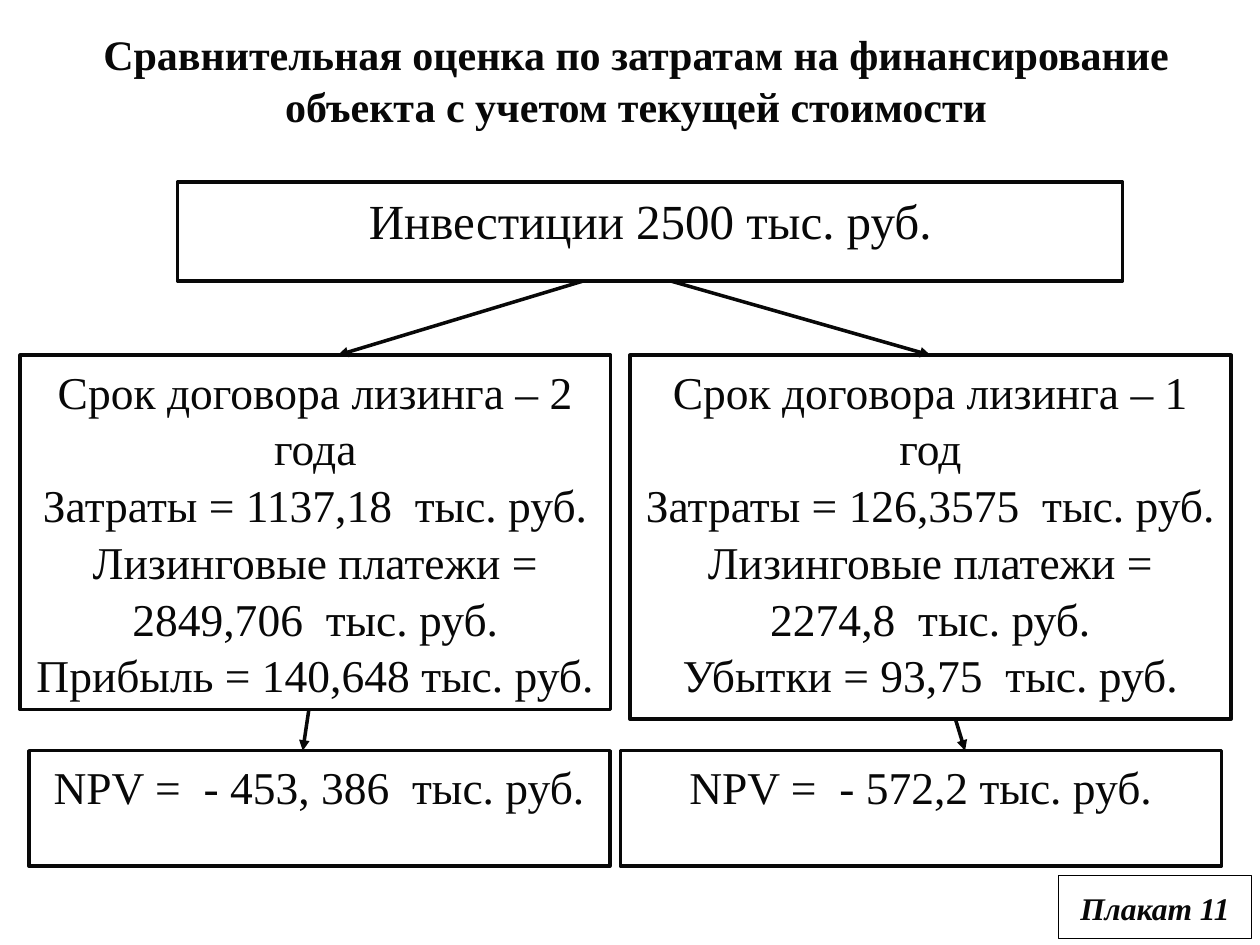
from lxml.etree import SubElement
from pptx import Presentation
from pptx.dml.color import RGBColor
from pptx.enum.shapes import MSO_CONNECTOR, MSO_SHAPE
from pptx.enum.text import MSO_ANCHOR, PP_ALIGN
from pptx.oxml.ns import qn
from pptx.util import Pt

INK = "080808"
WHITE = "FFFFFF"


def color(value):
    return RGBColor.from_string(value)


def write(shape, text, size, bold=False, italic=False, anchor=MSO_ANCHOR.TOP):
    tf = shape.text_frame
    tf.text = text
    tf.word_wrap = True
    tf.vertical_anchor = anchor
    for p in tf.paragraphs:
        p.alignment = PP_ALIGN.CENTER
        p.line_spacing = 1.04
        for r in p.runs:
            r.font.name = "Times New Roman"
            r.font.size = Pt(size)
            r.font.bold = bold
            r.font.italic = italic
            r.font.color.rgb = color(INK)


def add_title(s, x, y, w, h, text):
    box = s.shapes.add_textbox(Pt(x), Pt(y), Pt(w), Pt(h))
    write(box, text, 24, bold=True)


def add_box(s, x, y, w, h, text, size=26, line=INK, width=2, **style):
    sp = s.shapes.add_shape(MSO_SHAPE.RECTANGLE, Pt(x), Pt(y), Pt(w), Pt(h))
    sp.shadow.inherit = False
    sp.fill.solid()
    sp.fill.fore_color.rgb = color(WHITE)
    sp.line.color.rgb = color(line)
    sp.line.width = Pt(width)
    write(sp, text, size, **style)
    return sp


def add_arrow(s, x1, y1, x2, y2):
    c = s.shapes.add_connector(MSO_CONNECTOR.STRAIGHT, Pt(x1), Pt(y1), Pt(x2), Pt(y2))
    c.line.color.rgb = color(INK)
    c.line.width = Pt(2)
    SubElement(c.line._get_or_add_ln(), qn("a:tailEnd"), type="triangle")
    SubElement(c._element.spPr, qn("a:effectLst"))
    return c


def main():
    prs = Presentation()
    prs.slide_width, prs.slide_height = Pt(720), Pt(540)
    s = prs.slides.add_slide(prs.slide_layouts[6])

    # Title
    add_title(s, 25, 11.5, 677, 75.5,
              "Сравнительная оценка по затратам на финансирование "
              "объекта с учетом текущей стоимости")

    # Investment and the two leasing terms
    terms_y, npv_y = 203, 429
    add_box(s, 101.5, 104, 540, 56.5, "Инвестиции 2500 тыс. руб.", size=28)
    add_box(s, 11.5, terms_y, 337.5, 202.5,
            "Срок договора лизинга – 2 года\n"
            "Затраты = 1137,18  тыс. руб.\n"
            "Лизинговые платежи = 2849,706  тыс. руб.\n"
            "Прибыль = 140,648 тыс. руб.")
    one_year = add_box(s, 360, terms_y, 343.5, 208,
                       "Срок договора лизинга – 1 год\n"
                       "Затраты = 126,3575  тыс. руб.\n"
                       "Лизинговые платежи = 2274,8  тыс. руб.\n"
                       "Убытки = 93,75  тыс. руб.")

    # Net present values
    add_box(s, 16.5, npv_y, 332, 66, "NPV =  - 453, 386  тыс. руб.")
    add_box(s, 354.5, npv_y, 343.5, 66, "NPV =  - 572,2 тыс. руб.")

    # Arrows
    add_arrow(s, 333.5, 160.5, 193, terms_y)
    add_arrow(s, 383, 160.5, 531.75, terms_y).end_connect(one_year, 0)
    add_arrow(s, 176.5, 405.5, 173, npv_y)
    add_arrow(s, 546, 411, 551.5, npv_y)

    # Poster number
    add_box(s, 605, 500.5, 110, 36, "Плакат 11", size=18, line="000000",
            width=0.75, bold=True, italic=True, anchor=MSO_ANCHOR.MIDDLE)

    prs.save("out.pptx")


if __name__ == "__main__":
    main()
